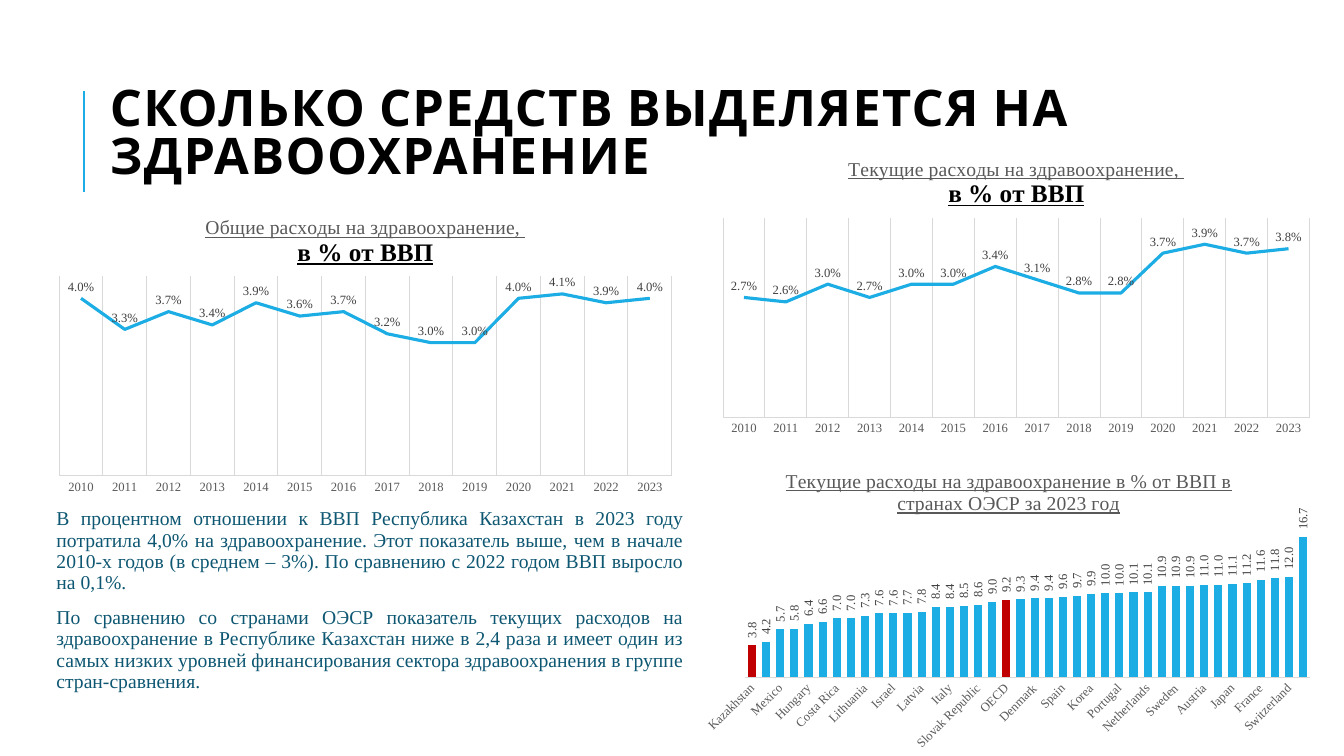
"""Build a slide on health spending as a share of GDP."""
from dataclasses import dataclass, field

from lxml import etree
from pptx import Presentation
from pptx import util as u
from pptx.chart.data import CategoryChartData
from pptx.dml.color import RGBColor
from pptx.enum import chart as ch, shapes, text
from pptx.oxml import ns

BLUE = RGBColor(0x1C, 0xAD, 0xE4)
RED = RGBColor(0xC0, 0x00, 0x00)
TEAL = RGBColor(0x0E, 0x57, 0x72)
BLACK = RGBColor(0, 0, 0)
DARK = RGBColor(0x40, 0x40, 0x40)
GRAY = RGBColor(0x59, 0x59, 0x59)
LIGHT = RGBColor(0xD9, 0xD9, 0xD9)
SERIF = "Times New Roman"

Box = tuple[float, float, float, float]
TitleLine = tuple[str, float, bool, RGBColor]


@dataclass
class ChartSpec:
    kind: ch.XL_CHART_TYPE
    box: Box
    plot_box: Box
    title: list[TitleLine]
    categories: list[str]
    values: list[float]
    number_format: str
    maximum: float
    highlights: list[int] = field(default_factory=list)


YEARS = [str(year) for year in range(2010, 2024)]
TOTAL = [4.0, 3.3, 3.7, 3.4, 3.9, 3.6, 3.7, 3.2, 3.0, 3.0, 4.0, 4.1, 3.9, 4.0]
CURRENT = [2.7, 2.6, 3.0, 2.7, 3.0, 3.0, 3.4, 3.1, 2.8, 2.8, 3.7, 3.9, 3.7, 3.8]
COUNTRIES = {
    "Kazakhstan": 3.8, "Türkiye": 4.2, "Mexico": 5.7, "Luxembourg": 5.8,
    "Hungary": 6.4, "Ireland": 6.6, "Costa Rica": 7.0, "Poland": 7.0,
    "Lithuania": 7.3, "Estonia": 7.6, "Israel": 7.6, "Colombia": 7.7,
    "Latvia": 7.8, "Greece": 8.4, "Italy": 8.4, "Czechia": 8.5,
    "Slovak Republic": 8.6, "Iceland": 9.0, "OECD": 9.2, "Norway": 9.3,
    "Denmark": 9.4, "Slovenia": 9.4, "Spain": 9.6, "Australia": 9.7,
    "Korea": 9.9, "Chile": 10.0, "Portugal": 10.0, "Finland": 10.1,
    "Netherlands": 10.1, "Belgium": 10.9, "Sweden": 10.9, "United Kingdom": 10.9,
    "Austria": 11.0, "New Zealand": 11.0, "Japan": 11.1, "Canada": 11.2,
    "France": 11.6, "Germany": 11.8, "Switzerland": 12.0, "United States": 16.7,
}
COMMENTS = [
    "В процентном отношении к ВВП Республика Казахстан в 2023 году потратила 4,0% "
    "на здравоохранение. Этот показатель выше, чем в начале 2010-х годов (в среднем "
    "– 3%). По сравнению с 2022 годом ВВП выросло на 0,1%.",
    "По сравнению со странами ОЭСР показатель текущих расходов на здравоохранение в "
    "Республике Казахстан ниже в 2,4 раза и имеет один из самых низких уровней "
    "финансирования сектора здравоохранения в группе стран-сравнения.",
]


def trend(box: Box, heading: str, percents: list[float]) -> ChartSpec:
    """Describe a line chart of yearly shares."""
    title = [(heading, 14, False, GRAY), ("в % от ВВП", 18, True, BLACK)]
    shares = [round(percent / 100, 3) for percent in percents]
    return ChartSpec(ch.XL_CHART_TYPE.LINE, box, (0.02, 0.25, 0.96, 0.66), title,
                     YEARS, shares, "0.0%", 0.045)


CHARTS = [
    trend((0.46, 1.99, 6.33, 3), "Общие расходы на здравоохранение, ", TOTAL),
    trend((7.05, 1.41, 6.06, 3), "Текущие расходы на здравоохранение, ", CURRENT),
    ChartSpec(ch.XL_CHART_TYPE.COLUMN_CLUSTERED, (6.89, 4.5, 6.23, 3),
              (0.08, 0.24, 0.9, 0.5),
              [("Текущие расходы на здравоохранение в % от ВВП в странах ОЭСР за 2023 год",
                14, False, GRAY)],
              list(COUNTRIES), list(COUNTRIES.values()), "_-0.0_-", 18,
              [list(COUNTRIES).index(name) for name in ("Kazakhstan", "OECD")]),
]


def assign(target, formats: dict) -> None:
    """Set every attribute named in formats."""
    for name, value in formats.items():
        setattr(target, name, value)


def style(font, size: float, color: RGBColor, name: str = SERIF, **formats) -> None:
    """Format a font."""
    assign(font, {"size": u.Pt(size), "name": name, **formats})
    font.color.rgb = color


def place(sp, box: Box) -> None:
    """Move and size a shape."""
    assign(sp, dict(zip(("left", "top", "width", "height"), map(u.Inches, box))))


def outline(line, color: RGBColor, width: float) -> None:
    """Format a line."""
    line.color.rgb = color
    line.width = u.Pt(width)


def rotate(element, angle: int) -> None:
    """Turn the text of a chart part by an angle in degrees."""
    body = element.find(ns.qn("c:txPr")).find(ns.qn("a:bodyPr"))
    body.set("rot", str(angle * 60000))
    body.set("vert", "horz")


def fix_plot(chart, box: Box) -> None:
    """Set the inner plot area as fractions of the chart."""
    area = chart._chartSpace.chart.plotArea
    for old in area.findall(ns.qn("c:layout")):
        area.remove(old)
    layout = etree.Element(ns.qn("c:layout"))
    area.insert(0, layout)
    manual = etree.SubElement(layout, ns.qn("c:manualLayout"))
    values = {"layoutTarget": "inner", "xMode": "edge", "yMode": "edge",
              **dict(zip("xywh", box))}
    for tag, value in values.items():
        etree.SubElement(manual, ns.qn(f"c:{tag}")).set("val", str(value))


def add_chart(s, spec: ChartSpec) -> None:
    """Draw one chart."""
    data = CategoryChartData(number_format=spec.number_format)
    data.categories = spec.categories
    data.add_series("Series 1", spec.values)
    chart = s.shapes.add_chart(spec.kind, *map(u.Inches, spec.box), data).chart
    style(chart.font, 10, BLACK)
    assign(chart, {"has_legend": False, "has_title": True})
    fix_plot(chart, spec.plot_box)
    tf = chart.chart_title.text_frame
    for i, (line, size, bold, color) in enumerate(spec.title):
        p = tf.add_paragraph() if i else tf.paragraphs[0]
        r = p.add_run()
        r.text = line
        style(r.font, size, color, bold=bold, underline=True)

    is_line = spec.kind == ch.XL_CHART_TYPE.LINE
    assign(chart.value_axis, {"visible": False, "has_major_gridlines": False,
                              "minimum_scale": 0, "maximum_scale": spec.maximum})
    axis = chart.category_axis
    assign(axis, {"major_tick_mark": ch.XL_TICK_MARK.NONE,
                  "has_major_gridlines": is_line})
    style(axis.tick_labels.font, 9, GRAY)
    outline(axis.format.line, LIGHT, 0.75)

    plot = chart.plots[0]
    plot.vary_by_categories = False
    series = plot.series[0]
    labels = series.data_labels
    style(labels.font, 9, DARK)
    position = ch.XL_LABEL_POSITION.ABOVE if is_line else ch.XL_LABEL_POSITION.OUTSIDE_END
    assign(labels, {"show_value": True, "position": position,
                    "number_format": spec.number_format,
                    "number_format_is_linked": False})
    if is_line:
        outline(axis.major_gridlines.format.line, LIGHT, 0.75)
        outline(series.format.line, BLUE, 2.25)
        series.smooth = False
    else:
        assign(plot, {"gap_width": 74, "overlap": -27})
        rotate(axis._element, -45)
        rotate(labels._element, -90)
        for fill, color in [(series.format.fill, BLUE)] + [
                (series.points[i].format.fill, RED) for i in spec.highlights]:
            fill.solid()
            fill.fore_color.rgb = color


def add_texts(s) -> None:
    """Fill the title and the commentary."""
    title, body = s.shapes.title, s.placeholders[1]
    place(title, (0.99, 0.8, 12.13, 1.1))
    place(body, (0.46, 5, 6.42, 2.5))
    for sp, anchor in ((title, text.MSO_ANCHOR.MIDDLE), (body, text.MSO_ANCHOR.TOP)):
        assign(sp.text_frame, {"word_wrap": True, "vertical_anchor": anchor,
                               "auto_size": text.MSO_AUTO_SIZE.NONE})
    p = title.text_frame.paragraphs[0]
    assign(p, {"alignment": text.PP_ALIGN.LEFT, "line_spacing": 0.8})
    r = p.add_run()
    r.text = "СКОЛЬКО СРЕДСТВ ВЫДЕЛЯЕТСЯ НА ЗДРАВООХРАНЕНИЕ"
    style(r.font, 36, BLACK, "Cabin", bold=True)
    r.font._element.set("spc", "100")

    tf = body.text_frame
    for i, comment in enumerate(COMMENTS):
        p = tf.add_paragraph() if i else tf.paragraphs[0]
        assign(p, {"alignment": text.PP_ALIGN.JUSTIFY, "line_spacing": 0.9,
                   "space_before": u.Pt(10)})
        pPr = p._p.get_or_add_pPr()
        pPr.set("marL", "0")
        pPr.set("indent", "0")
        etree.SubElement(pPr, ns.qn("a:buNone"))
        r = p.add_run()
        r.text = comment
        style(r.font, 14, TEAL)


def main() -> None:
    """Build and save the slide."""
    prs = Presentation()
    assign(prs, {"slide_width": u.Inches(13.33), "slide_height": u.Inches(7.5)})
    s = prs.slides.add_slide(prs.slide_layouts[1])
    rule = s.shapes.add_connector(shapes.MSO_CONNECTOR.STRAIGHT,
                                  *map(u.Inches, (0.83, 1.9, 0.83, 0.9)))
    outline(rule.line, BLUE, 1.5)
    etree.SubElement(rule._element.spPr, ns.qn("a:effectLst"))
    add_texts(s)
    for spec in CHARTS:
        add_chart(s, spec)
    prs.save("out.pptx")


if __name__ == "__main__":
    main()
